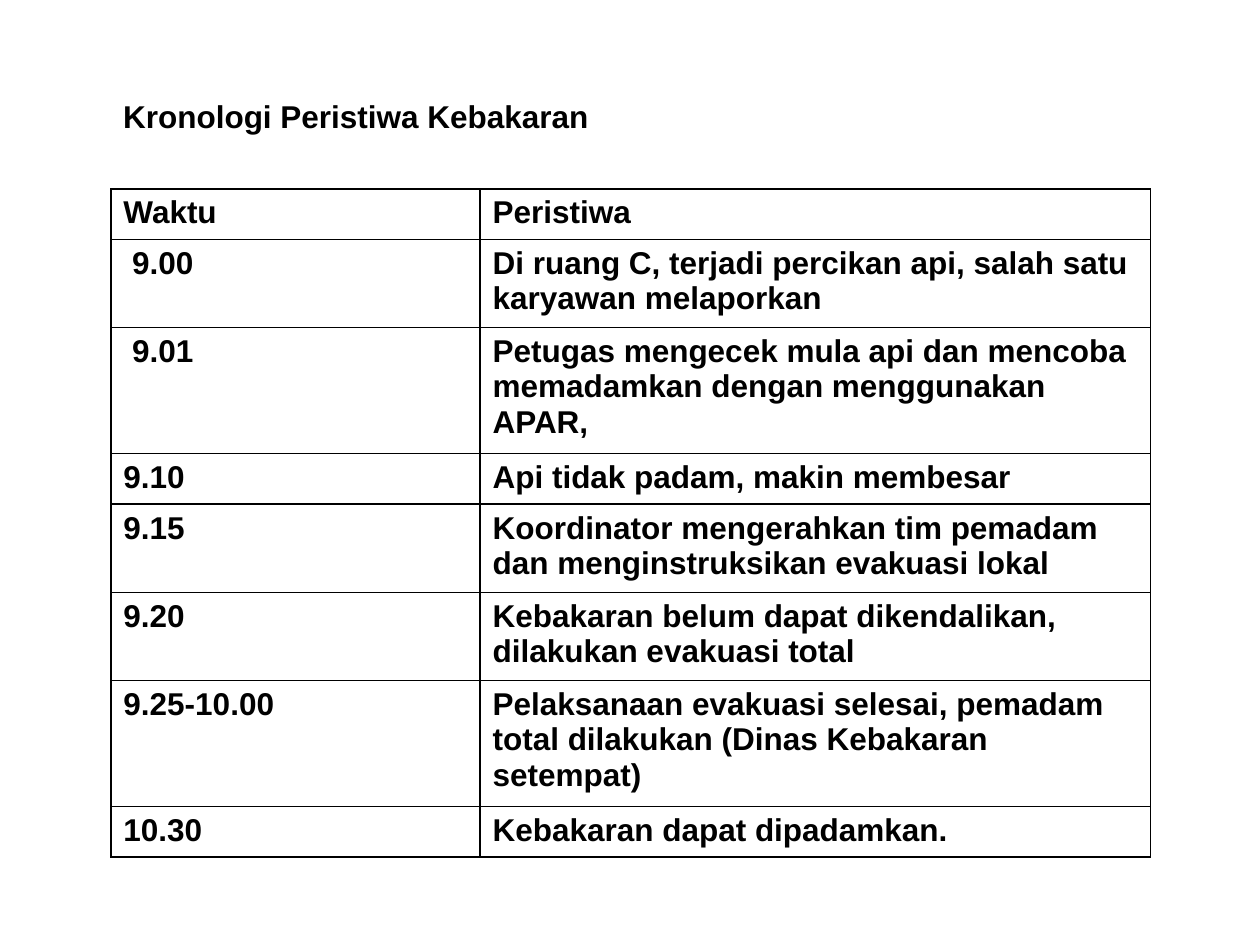
from lxml.etree import SubElement
from pptx import Presentation
from pptx.dml.color import RGBColor
from pptx.enum.text import MSO_ANCHOR
from pptx.oxml.ns import qn
from pptx.util import Inches, Pt

TITLE = "Kronologi Peristiwa Kebakaran"
EVENTS = [
    ("Waktu", "Peristiwa", 1),
    (" 9.00", "Di ruang C, terjadi percikan api, salah satu karyawan melaporkan", 2),
    (" 9.01", "Petugas mengecek mula api dan mencoba memadamkan dengan menggunakan APAR,", 3),
    ("9.10", "Api tidak padam, makin membesar", 1),
    ("9.15", "Koordinator mengerahkan tim pemadam dan menginstruksikan evakuasi lokal", 2),
    ("9.20", "Kebakaran belum dapat dikendalikan, dilakukan evakuasi total", 2),
    ("9.25-10.00", "Pelaksanaan evakuasi selesai, pemadam total dilakukan (Dinas Kebakaran setempat)", 3),
    ("10.30", "Kebakaran dapat dipadamkan.", 1),
]
INK = "000000"
PAPER = "FFFFFF"
LEFT = 0.88
COLUMN_WIDTHS = [2.93, 5.32]
ROW_PADDING, LINE_HEIGHT = 0.1, 0.3
FONT = {"name": "Arial", "size": Pt(18), "bold": True}
TITLE_FRAME = {
    "word_wrap": False,
    "vertical_anchor": MSO_ANCHOR.TOP,
    "margin_top": Inches(0.07),
}
TABLE_FLAGS = {"first_row": False, "horz_banding": False}


def apply(target, values):
    for name, value in values.items():
        setattr(target, name, value)


def color(hex_value):
    return RGBColor.from_string(hex_value)


def write(frame, text):
    run = frame.paragraphs[0].add_run()
    run.text = text
    apply(run.font, FONT)
    run.font.color.rgb = color(INK)


def add_borders(cell):
    properties = cell._tc.get_or_add_tcPr()
    for side in ("lnL", "lnR", "lnT", "lnB"):
        border = SubElement(properties, qn(f"a:{side}"), w=str(Pt(1)))
        fill = SubElement(border, qn("a:solidFill"))
        SubElement(fill, qn("a:srgbClr"), val=INK)


def add_title(slide):
    title = slide.shapes.add_textbox(Inches(LEFT), Inches(0.7), Inches(3.9), Inches(0.8))
    apply(title.text_frame, TITLE_FRAME)
    write(title.text_frame, TITLE)


def add_timeline(slide):
    heights = [ROW_PADDING + LINE_HEIGHT * lines for *_, lines in EVENTS]
    timeline = slide.shapes.add_table(
        len(EVENTS), len(COLUMN_WIDTHS), Inches(LEFT), Inches(1.5),
        Inches(sum(COLUMN_WIDTHS)), Inches(sum(heights)),
    ).table
    apply(timeline, TABLE_FLAGS)
    for column, width in zip(timeline.columns, COLUMN_WIDTHS):
        column.width = Inches(width)
    for row, height, (*entries, _) in zip(timeline.rows, heights, EVENTS):
        row.height = Inches(height)
        for cell, entry in zip(row.cells, entries):
            write(cell.text_frame, entry)
            add_borders(cell)
            cell.fill.solid()
            cell.fill.fore_color.rgb = color(PAPER)


def main():
    deck = Presentation()
    apply(deck, {"slide_width": Inches(10), "slide_height": Inches(7.5)})
    slide = deck.slides.add_slide(deck.slide_layouts[6])
    add_title(slide)
    add_timeline(slide)
    deck.save("out.pptx")


if __name__ == "__main__":
    main()
